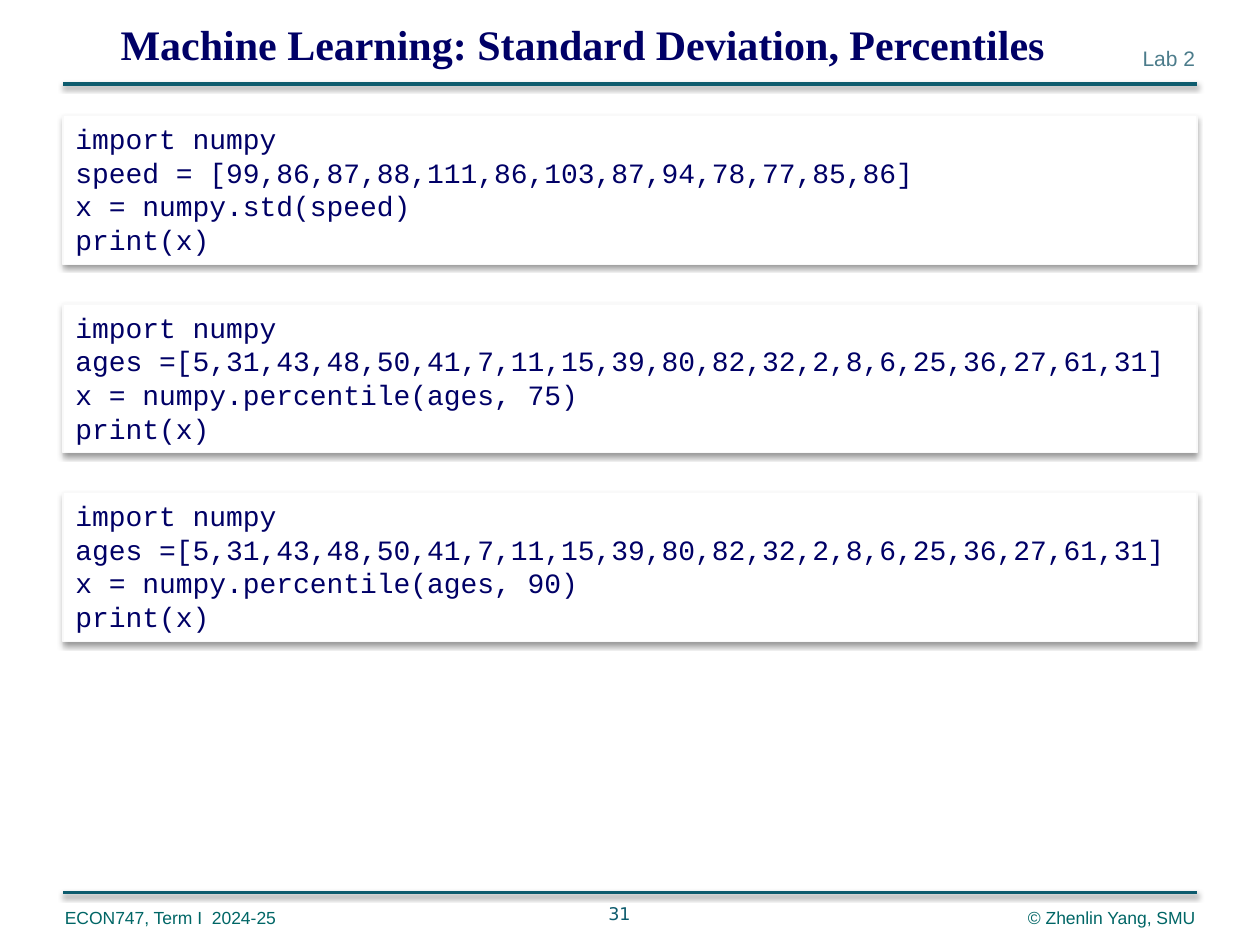
from pptx import Presentation
from pptx.dml.color import RGBColor
from pptx.enum.shapes import MSO_CONNECTOR, MSO_SHAPE
from pptx.enum.text import MSO_ANCHOR, PP_ALIGN
from pptx.oxml import parse_xml
from pptx.oxml.ns import nsdecls
from pptx.util import Pt

LEFT, CENTER, RIGHT = PP_ALIGN.LEFT, PP_ALIGN.CENTER, PP_ALIGN.RIGHT
TOP, MIDDLE = MSO_ANCHOR.TOP, MSO_ANCHOR.MIDDLE
RECTANGLE, STRAIGHT = MSO_SHAPE.RECTANGLE, MSO_CONNECTOR.STRAIGHT

SHADOW = f"""<a:effectLst {nsdecls("a")}>
  <a:outerShdw blurRad="{Pt(3.1)}" dist="{Pt(1.6)}" dir="5400000" rotWithShape="0">
    <a:srgbClr val="000000"><a:alpha val="38000"/></a:srgbClr>
  </a:outerShdw>
</a:effectLst>"""


def color(value):
    return RGBColor.from_string(value)


def write(frame, text, font="Arial", size=10, ink="006666", bold=False,
          align=LEFT, anchor=TOP, pitch=None):
    """Fill a text frame, one paragraph per line of text."""
    frame.word_wrap = True
    frame.vertical_anchor = anchor
    frame.text = text
    for paragraph in frame.paragraphs:
        paragraph.alignment = align
        if pitch:
            paragraph.line_spacing = Pt(pitch)
        style = paragraph.runs[0].font
        style.name, style.size, style.bold = font, Pt(size), bold
        style.color.rgb = color(ink)


class LabSlide:
    NAVY, TEAL, PALE_TEAL = "000066", "0D5B6D", "4C7C8B"
    PAPER, EDGE = "FFFFFF", "F9F9F9"
    MARGIN, CONTENT_WIDTH = 36, 648

    def __init__(self, slide):
        self.shapes = slide.shapes

    def text(self, text, left, top, width, height, **style):
        box = self.shapes.add_textbox(Pt(left), Pt(top), Pt(width), Pt(height))
        write(box.text_frame, text, **style)

    def rule(self, y):
        line = self.shapes.add_connector(
            STRAIGHT, Pt(self.MARGIN), Pt(y),
            Pt(self.MARGIN + self.CONTENT_WIDTH), Pt(y))
        line.line.color.rgb = color(self.TEAL)
        line.line.width = Pt(2)
        line._element.spPr.append(parse_xml(SHADOW))

    def code(self, source, top, height):
        panel = self.shapes.add_shape(
            RECTANGLE, Pt(self.MARGIN), Pt(top), Pt(self.CONTENT_WIDTH), Pt(height))
        panel.fill.solid()
        panel.fill.fore_color.rgb = color(self.PAPER)
        panel.line.color.rgb = color(self.EDGE)
        panel.line.width = Pt(0.75)
        panel._element.spPr.append(parse_xml(SHADOW))
        write(panel.text_frame, source, font="Courier New", size=16,
              ink=self.NAVY, pitch=19.2)


def main():
    deck = Presentation()
    deck.slide_width, deck.slide_height = Pt(720), Pt(540)
    lab = LabSlide(deck.slides.add_slide(deck.slide_layouts[6]))

    # Footer
    lab.rule(510)
    lab.text("ECON747, Term I  2024-25", 30, 515, 168, 19.5)
    lab.text("© Zhenlin Yang, SMU", 522, 515, 168, 19.5, align=RIGHT)
    lab.text("31", 270, 512.5, 168, 21.5, font="DejaVu Sans", ink=lab.TEAL,
             align=CENTER)

    # Header
    lab.rule(48)
    lab.text("Lab 2", 642, 22.5, 48, 21.5, size=12, ink=lab.PALE_TEAL, align=RIGHT)
    lab.text("Machine Learning: Standard Deviation, Percentiles", 54, 6.5, 558, 36.5,
             font="Times New Roman", size=24, ink=lab.NAVY, bold=True,
             align=CENTER, anchor=MIDDLE)

    # Code examples
    speed = "speed = [99,86,87,88,111,86,103,87,94,78,77,85,86]"
    ages = "ages =[5,31,43,48,50,41,7,11,15,39,80,82,32,2,8,6,25,36,27,61,31]"
    examples = [
        (speed, "numpy.std(speed)"),
        (ages, "numpy.percentile(ages, 75)"),
        (ages, "numpy.percentile(ages, 90)"),
    ]
    for index, (data, call) in enumerate(examples):
        lab.code(f"import numpy\n{data}\nx = {call}\nprint(x)",
                 top=66 + index * 107.75, height=85)

    deck.save("out.pptx")


if __name__ == "__main__":
    main()
